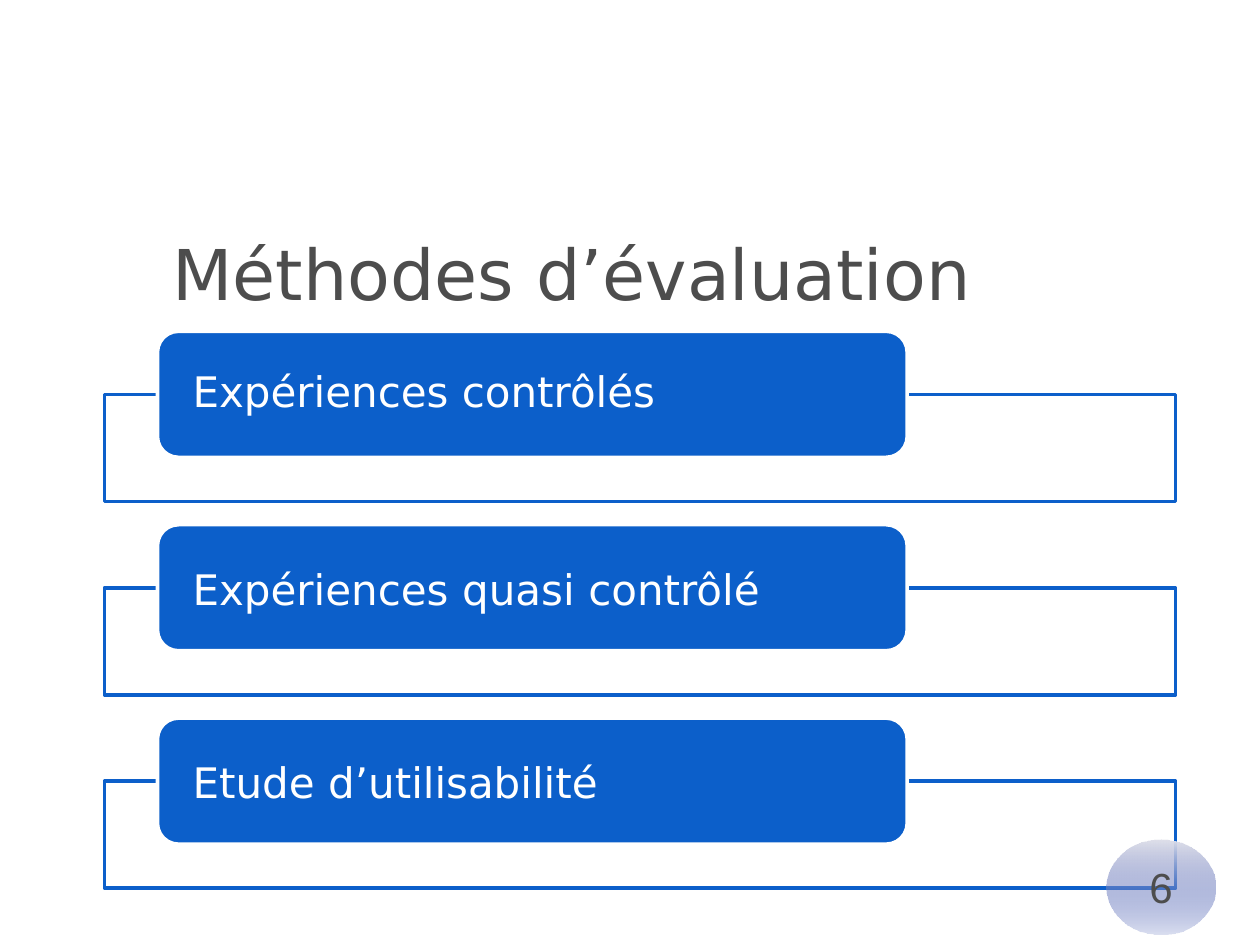
from lxml import etree
from pptx import Presentation
from pptx.dml.color import RGBColor
from pptx.enum.shapes import MSO_SHAPE
from pptx.enum.text import MSO_ANCHOR, PP_ALIGN
from pptx.oxml import parse_xml
from pptx.oxml.ns import nsdecls, qn
from pptx.util import Inches, Pt

RECT, ROUNDED, OVAL = MSO_SHAPE.RECTANGLE, MSO_SHAPE.ROUNDED_RECTANGLE, MSO_SHAPE.OVAL
MIDDLE = MSO_ANCHOR.MIDDLE
LEFT, CENTER = PP_ALIGN.LEFT, PP_ALIGN.CENTER

COLORS = {"blue": "0C5FCA", "white": "FFFFFF", "grey": "4D4D4D",
          "badge_top": "DFE0EA", "badge_bottom": "142F9E"}
BODY_FONT = "DejaVu Sans"
SPACE_FONT = "Times New Roman"

# Each method is a list of (text, font, size) runs
WIDE_SPACE = (" ", SPACE_FONT, 31)
METHODS = [
    [("Expériences contrôlés", BODY_FONT, 24)],
    [("Expériences", BODY_FONT, 24), WIDE_SPACE, ("quasi", BODY_FONT, 24),
     WIDE_SPACE, ("contrôlé", BODY_FONT, 24)],
    [("Etude", BODY_FONT, 24), WIDE_SPACE, ("d’utilisabilité", BODY_FONT, 24)],
]


def rgb(name):
    return RGBColor.from_string(COLORS[name])


def add_runs(paragraph, runs, color):
    for text, font, size in runs:
        run = paragraph.add_run()
        run.text = text
        run.font.name = font
        run.font.size = Pt(size)
        run.font.color.rgb = rgb(color)


def add_panel(slide, preset, box, fill, line):
    panel = slide.shapes.add_shape(preset, *map(Inches, box))
    panel.shadow.inherit = False
    panel.fill.solid()
    panel.fill.fore_color.rgb = rgb(fill)
    panel.line.color.rgb = rgb(line)
    panel.line.width = Pt(2)
    return panel


def add_title(slide, box):
    frame = slide.shapes.add_textbox(*map(Inches, box)).text_frame
    frame.word_wrap = True
    frame.vertical_anchor = MIDDLE
    title = frame.paragraphs[0]
    title.line_spacing = 1.5
    add_runs(title, [("Méthodes d’évaluation", BODY_FONT, 40)], "grey")


def add_method(slide, box, runs):
    left, top, width, height = box
    # Outlined band behind the label
    band = add_panel(slide, RECT, (left, top + 0.5, width, height - 0.5), "white", "blue")
    band_color = band.fill._xPr.find(qn("a:solidFill"))[0]
    etree.SubElement(band_color, qn("a:alpha"), val="90000")

    # Label on the band's top edge
    label = add_panel(slide, ROUNDED, (left + 0.42, top, width * 0.7, 1), "blue", "white")
    frame = label.text_frame
    frame.word_wrap = True
    frame.vertical_anchor = MIDDLE
    frame.margin_left = frame.margin_right = Inches(0.23)
    frame.margin_top = frame.margin_bottom = 0
    paragraph = frame.paragraphs[0]
    paragraph.alignment = LEFT
    paragraph.line_spacing = 0.9
    add_runs(paragraph, runs, "white")


def add_methods(slide, box, pitch):
    left, top, width, height = box
    for row, runs in enumerate(METHODS):
        add_method(slide, (left, top + row * pitch, width, height), runs)


def add_page_badge(slide, box):
    badge = slide.shapes.add_shape(OVAL, *map(Inches, box))
    badge.shadow.inherit = False
    badge.line.fill.background()
    # Vertical gradient fading to transparent
    gradient = parse_xml(
        f'<a:gradFill {nsdecls("a")} rotWithShape="1"><a:gsLst>'
        f'<a:gs pos="0"><a:srgbClr val="{COLORS["badge_top"]}"/></a:gs>'
        f'<a:gs pos="100000"><a:srgbClr val="{COLORS["badge_bottom"]}">'
        '<a:alpha val="15000"/></a:srgbClr></a:gs>'
        '</a:gsLst><a:lin ang="5400000" scaled="1"/></a:gradFill>')
    badge._element.spPr.find(qn("a:prstGeom")).addnext(gradient)
    frame = badge.text_frame
    frame.word_wrap = False
    frame.vertical_anchor = MIDDLE
    number = frame.paragraphs[0]
    number.alignment = CENTER
    add_runs(number, [("6", "Arial", 24)], "grey")


def main():
    prs = Presentation()
    prs.slide_width, prs.slide_height = Inches(10), Inches(7.5)
    slide = prs.slides.add_slide(prs.slide_layouts[6])
    add_title(slide, (1.27, 1.61, 8, 0.78))
    add_methods(slide, (0.83, 2.63, 8.5, 1.35), pitch=1.535)
    add_page_badge(slide, (8.78, 6.66, 0.87, 0.76))
    prs.save("out.pptx")


if __name__ == "__main__":
    main()
